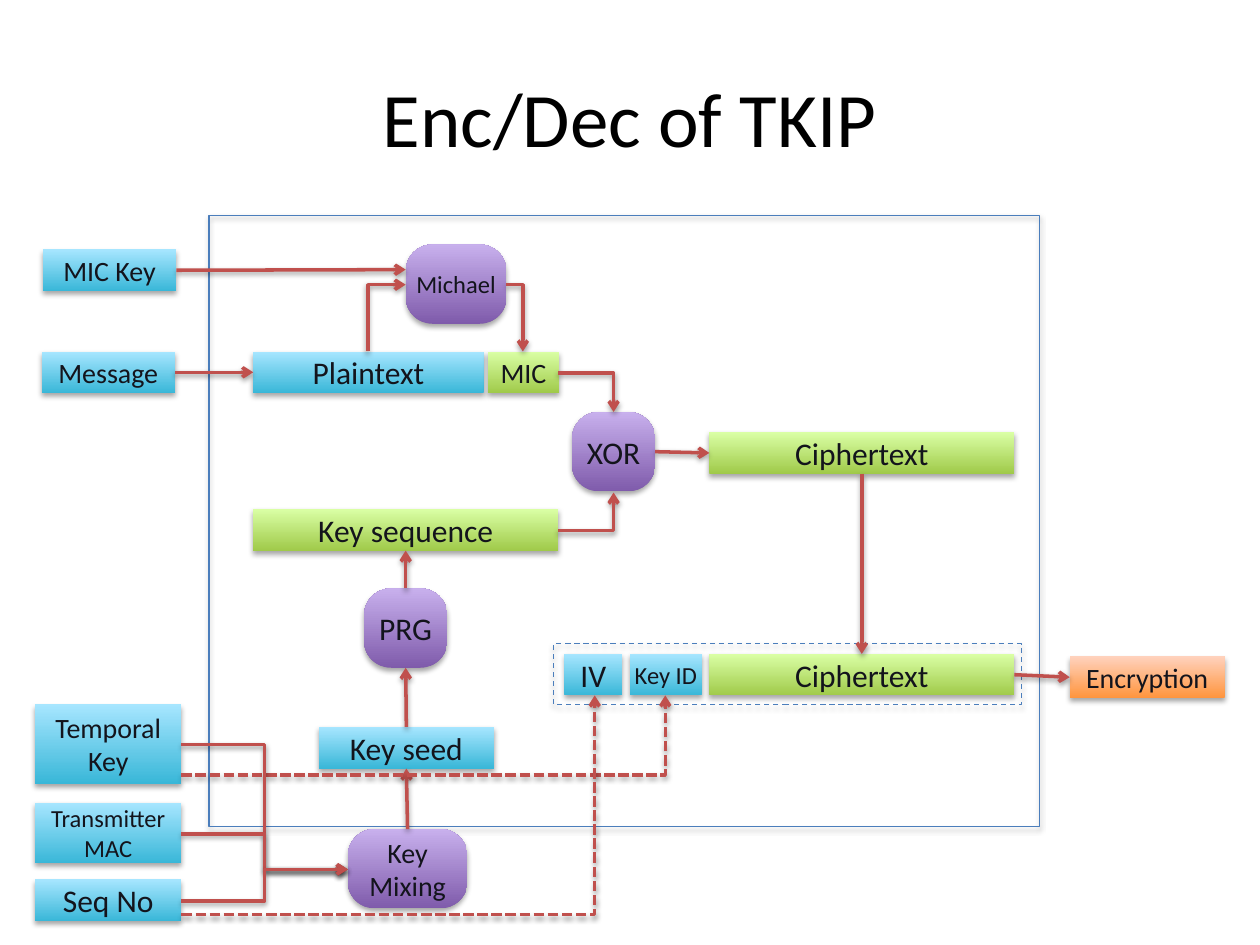
"""Build the slide showing TKIP encryption and decryption as a flow diagram."""
import pptx
import pptx.util
from lxml import etree
from pptx.dml.color import RGBColor
from pptx.enum.dml import MSO_LINE
from pptx.enum.shapes import MSO_CONNECTOR, MSO_SHAPE
from pptx.enum.text import MSO_ANCHOR, PP_ALIGN
from pptx.oxml.ns import qn
from pptx.util import Inches, Pt

INK, BLACK = RGBColor(0x13, 0x14, 0x1C), RGBColor(0, 0, 0)
RED, FRAME = RGBColor(0xC0, 0x50, 0x4D), RGBColor(0x4B, 0x7E, 0xBC)
BLUE = RGBColor(0x39, 0xB7, 0xD8), RGBColor(0xA7, 0xE6, 0xFF)
GREEN = RGBColor(0xA0, 0xCA, 0x4A), RGBColor(0xDA, 0xFF, 0xA5)
PURPLE = RGBColor(0x7F, 0x5B, 0xAB), RGBColor(0xC8, 0xB0, 0xED)
ORANGE = RGBColor(0xFF, 0x95, 0x3E), RGBColor(0xFF, 0xD2, 0xBD)

TITLE = ("Enc/Dec of TKIP", (0.5, 0.3, 9, 1.25), 44)
ROW, NODE = 0.33, 0.63
FRAMES = [
    ((1.66, 1.71, 6.59, 4.85), MSO_LINE.SOLID),
    ((4.39, 5.11, 3.72, 0.48), MSO_LINE.DASH),
]
BOXES = {
    "mic_key": ("MIC Key", (0.34, 1.98, 1.06, ROW), BLUE, 16),
    "message": ("Message", (0.33, 2.79, 1.06, ROW), BLUE, 16),
    "plaintext": ("Plaintext", (2.01, 2.79, 1.83, ROW), BLUE, 18),
    "mic": ("MIC", (3.87, 2.79, 0.57, ROW), GREEN, 16),
    "michael": ("Michael", (3.22, 1.94, 0.8, NODE), PURPLE, 14),
    "xor": ("XOR", (4.54, 3.27, 0.66, NODE), PURPLE, 18),
    "cipher": ("Ciphertext", (5.63, 3.43, 2.42, ROW), GREEN, 18),
    "sequence": ("Key sequence", (2.01, 4.04, 2.42, ROW), GREEN, 18),
    "prg": ("PRG", (2.89, 4.67, 0.66, NODE), PURPLE, 18),
    "iv": ("IV", (4.48, 5.19, 0.46, ROW), BLUE, 18),
    "key_id": ("Key ID", (5, 5.19, 0.57, ROW), BLUE, 14),
    "payload": ("Ciphertext", (5.63, 5.19, 2.42, ROW), GREEN, 18),
    "encryption": ("Encryption", (8.49, 5.21, 1.23, ROW), ORANGE, 16),
    "seed": ("Key seed", (2.53, 5.77, 1.39, ROW), BLUE, 18),
    "temporal": ("Temporal Key", (0.28, 5.59, 1.16, NODE), BLUE, 16),
    "transmitter": ("Transmitter\nMAC", (0.28, 6.37, 1.16, 0.48), BLUE, 14),
    "seq_no": ("Seq No", (0.28, 6.98, 1.16, ROW), BLUE, 18),
    "mixing": ("Key\nMixing", (2.76, 6.58, 0.95, NODE), PURPLE, 16),
}
TOP, LEFT, BOTTOM, RIGHT = range(4)
JOINS = [
    ("message", RIGHT, "plaintext", LEFT),
    ("xor", RIGHT, "cipher", LEFT),
    ("cipher", BOTTOM, "payload", TOP),
    ("payload", RIGHT, "encryption", LEFT),
    ("prg", TOP, "sequence", BOTTOM),
    ("seed", TOP, "prg", BOTTOM),
    ("mixing", TOP, "seed", BOTTOM),
]
CORNERS = [
    ((3.22, 2.26), (2.92, 2.79), "headEnd", MSO_LINE.SOLID),
    ((4.02, 2.26), (4.15, 2.79), "tailEnd", MSO_LINE.SOLID),
    ((4.43, 2.96), (4.87, 3.27), "tailEnd", MSO_LINE.SOLID),
    ((4.43, 4.21), (4.87, 3.91), "tailEnd", MSO_LINE.SOLID),
    ((1.44, 6.15), (5.28, 5.52), "tailEnd", MSO_LINE.SQUARE_DOT),
    ((1.44, 7.26), (4.72, 5.52), "tailEnd", MSO_LINE.SQUARE_DOT),
]
MIXING_INPUTS = [5.91, 6.62, 7.15]
MIXING_ENTRY = (2.76, 6.9)
MIC_KEY_ARROW = ((1.4, 2.15), (3.22, 2.14))


def set_all(obj, values):
    for name, value in values.items():
        setattr(obj, name, value)


def add_shadow(sp, alpha, dist):
    effects = etree.SubElement(sp.element.spPr, qn("a:effectLst"))
    values = {"blurRad": Pt(3.1), "dist": Pt(dist), "dir": 5400000, "rotWithShape": 0}
    shadow = etree.SubElement(effects, qn("a:outerShdw"),
                              {k: str(v) for k, v in values.items()})
    color = etree.SubElement(shadow, qn("a:srgbClr"), val="000000")
    etree.SubElement(color, qn("a:alpha"), val=str(alpha * 1000))


def write(sp, text, size, color, margin):
    tf = sp.text_frame
    set_all(tf, {"word_wrap": True, "vertical_anchor": MSO_ANCHOR.MIDDLE,
                 "margin_left": Inches(margin), "margin_right": Inches(margin),
                 "text": text})
    for p in tf.paragraphs:
        p.alignment = PP_ALIGN.CENTER
        for r in p.runs:
            set_all(r.font, {"name": "Calibri", "size": Pt(size)})
            r.font.color.rgb = color


def add_box(s, text, at, colors, size):
    kind = MSO_SHAPE.ROUNDED_RECTANGLE if colors is PURPLE else MSO_SHAPE.RECTANGLE
    sp = s.shapes.add_shape(kind, *map(Inches, at))
    if colors is PURPLE:
        sp.adjustments[0] = 0.34
    sp.fill.gradient()
    sp.fill.gradient_angle = 90
    for i, color in enumerate(colors):
        stop = sp.fill.gradient_stops[i]
        stop.color.rgb = color
        stop.position = i
    sp.line.fill.background()
    add_shadow(sp, 35, 1.8)
    write(sp, text, size, INK, 0.1 if at[2] >= 1 else 0)
    return sp


def add_frame(s, at, dash):
    sp = s.shapes.add_shape(MSO_SHAPE.RECTANGLE, *map(Inches, at))
    sp.fill.background()
    sp.line.color.rgb = FRAME
    set_all(sp.line, {"width": Pt(0.75), "dash_style": dash})
    add_shadow(sp, 35, 1.8)


def add_arrow(s, kind, start=(0, 0), end=(0, 0), tip="tailEnd", dash=MSO_LINE.SOLID):
    c = s.shapes.add_connector(kind, *map(Inches, start + end))
    c.line.color.rgb = RED
    set_all(c.line, {"width": Pt(2), "dash_style": dash})
    etree.SubElement(c.element.spPr.find(qn("a:ln")), qn("a:" + tip), type="arrow")
    add_shadow(c, 38, 1.6)
    return c


def main():
    prs = pptx.Presentation()
    set_all(prs, {"slide_width": Inches(10), "slide_height": Inches(7.5)})
    s = prs.slides.add_slide(prs.slide_layouts[6])

    text, at, size = TITLE
    write(s.shapes.add_textbox(*map(Inches, at)), text, size, BLACK, 0.1)
    for at, dash in FRAMES:
        add_frame(s, at, dash)
    boxes = {name: add_box(s, *values) for name, values in BOXES.items()}

    for source, out, target, into in JOINS:
        c = add_arrow(s, MSO_CONNECTOR.STRAIGHT)
        c.begin_connect(boxes[source], out)
        c.end_connect(boxes[target], into)
    c = add_arrow(s, MSO_CONNECTOR.STRAIGHT, *MIC_KEY_ARROW)
    c.begin_connect(boxes["mic_key"], RIGHT)

    for corner in CORNERS:
        c = add_arrow(s, MSO_CONNECTOR.ELBOW, *corner)
        c.element.spPr.find(qn("a:prstGeom")).set("prst", "bentConnector2")
    for y in MIXING_INPUTS:
        add_arrow(s, MSO_CONNECTOR.ELBOW, (1.44, y), MIXING_ENTRY)

    prs.save("out.pptx")


if __name__ == "__main__":
    main()
